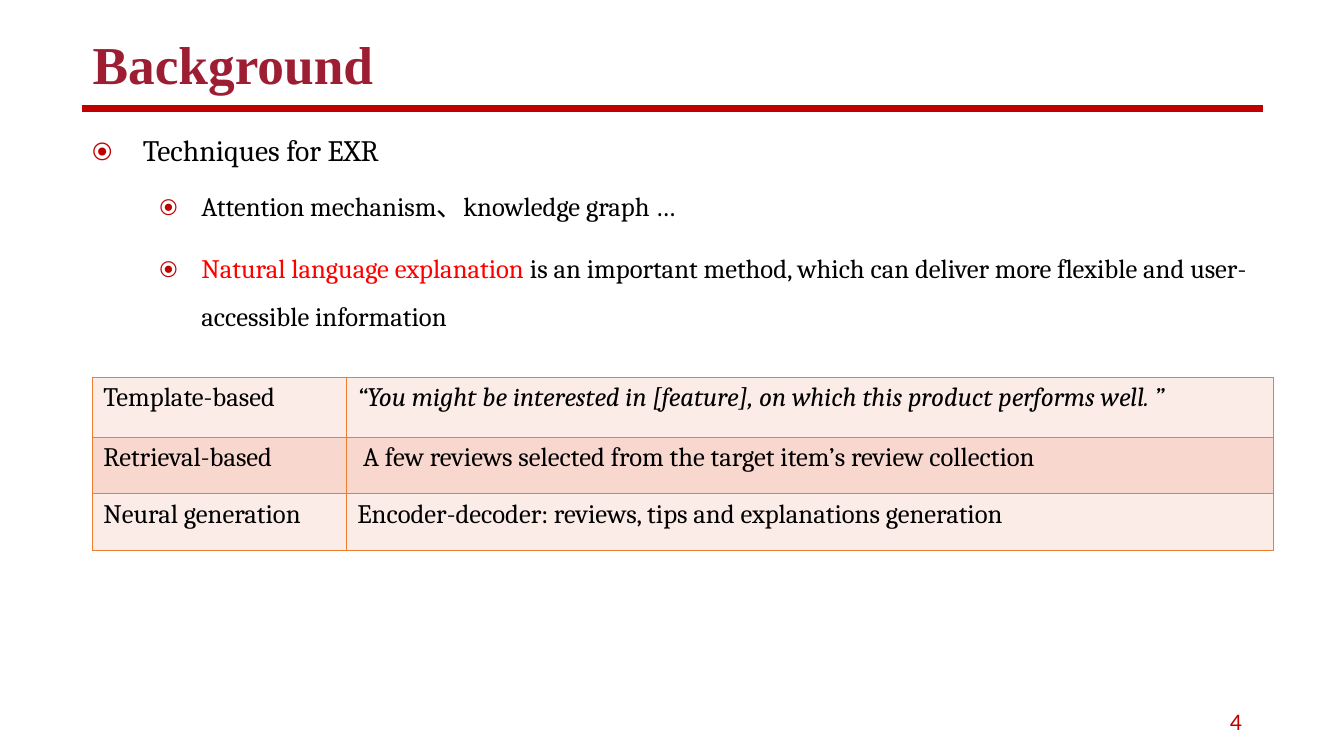
from pptx import Presentation
from pptx.util import Inches, Pt
from pptx.dml.color import RGBColor as RGB
from pptx.enum.shapes import MSO_CONNECTOR as CONN
from pptx.enum.text import PP_ALIGN as ALIGN, MSO_ANCHOR as ANCHOR
from pptx.oxml.ns import qn
from lxml.etree import SubElement

C = {"title": "9D1D32", "rule": "C00000", "text": "000000", "accent": "FF0000",
     "border": "ED7D31", "light": "FCECE8", "dark": "F8D7CE"}


def add_run(p, text, size, color="text", name="Cambria", **extra):
    r = p.add_run()
    r.text = text
    for key, value in {"name": name, "size": Pt(size), **extra}.items():
        setattr(r.font, key, value)
    r.font.color.rgb = RGB.from_string(C[color])


def add_color(parent, tag, color):
    el = SubElement(parent, qn(tag))
    SubElement(el, qn("a:srgbClr"), val=C[color])


prs = Presentation()
prs.slide_width, prs.slide_height = Inches(12.6), Inches(7.09)
s = prs.slides.add_slide(prs.slide_layouts[6])

# Title and rule
tf = s.shapes.add_textbox(Inches(0.77), Inches(0.24), Inches(3.32), Inches(0.71)).text_frame
add_run(tf.paragraphs[0], "Background", 36, "title", "Times New Roman", bold=True)

rule = s.shapes.add_connector(CONN.STRAIGHT, Inches(0.77), Inches(1.02), Inches(11.84), Inches(1.02))
rule.line.color.rgb = RGB.from_string(C["rule"])
rule.line.width = Pt(4.5)
SubElement(rule._element.spPr, qn("a:effectLst"))

# Bullets: level, indent, hanging, space before, line spacing, size, runs
bullets = [
    (0, 0.47, 0.47, 4, 1.0, 20, [("Techniques for EXR", "text")]),
    (1, 1.02, 0.39, 4, 1.5, 18, [("Attention mechanism、knowledge graph …", "text")]),
    (1, 1.02, 0.39, 9.5, 1.5, 18, [
        ("Natural language explanation ", "accent"),
        ("is an important method, which can deliver more flexible and "
         "user-accessible information", "text")]),
]
tf = s.shapes.add_textbox(Inches(0.77), Inches(1.19), Inches(11.18), Inches(2.2)).text_frame
tf.word_wrap = True
for i, (level, indent, hang, before, spacing, size, runs) in enumerate(bullets):
    p = tf.add_paragraph() if i else tf.paragraphs[0]
    p.level, p.space_before, p.line_spacing = level, Pt(before), spacing
    pPr = p._p.get_or_add_pPr()
    pPr.set("marL", str(Inches(indent)))
    pPr.set("indent", str(-Inches(hang)))
    add_color(pPr, "a:buClr", "rule")
    SubElement(pPr, qn("a:buFont"), typeface="Cambria")
    SubElement(pPr, qn("a:buChar"), char="⦿")
    for text, color in runs:
        add_run(p, text, size, color)

# Table of explanation methods
rows = [
    ("Template-based", "“You might be interested in [feature], on which this product performs well. ”"),
    ("Retrieval-based", " A few reviews selected from the target item’s review collection"),
    ("Neural generation", "Encoder-decoder: reviews, tips and explanations generation"),
]
table = s.shapes.add_table(3, 2, Inches(0.87), Inches(3.54), Inches(11.07), Inches(1.62)).table
for col, width in zip(table.columns, (2.38, 8.69)):
    col.width = Inches(width)
for row, height in zip(table.rows, (0.56, 0.53, 0.53)):
    row.height = Inches(height)
for i, texts in enumerate(rows):
    for j, text in enumerate(texts):
        cell = table.cell(i, j)
        add_run(cell.text_frame.paragraphs[0], text, 18, italic=(i, j) == (0, 1))
        tcPr = cell._tc.get_or_add_tcPr()
        for side in ("a:lnL", "a:lnR", "a:lnT", "a:lnB"):
            ln = SubElement(tcPr, qn(side), w=str(Pt(1)))
            add_color(ln, "a:solidFill", "border")
        cell.fill.solid()
        cell.fill.fore_color.rgb = RGB.from_string(C["dark" if i % 2 else "light"])

# Slide number
tf = s.shapes.add_textbox(Inches(8.9), Inches(6.57), Inches(2.84), Inches(0.38)).text_frame
tf.word_wrap = True
tf.vertical_anchor = ANCHOR.MIDDLE
tf.paragraphs[0].alignment = ALIGN.RIGHT
add_run(tf.paragraphs[0], "4", 16, "rule", "Calibri")

prs.save("out.pptx")
